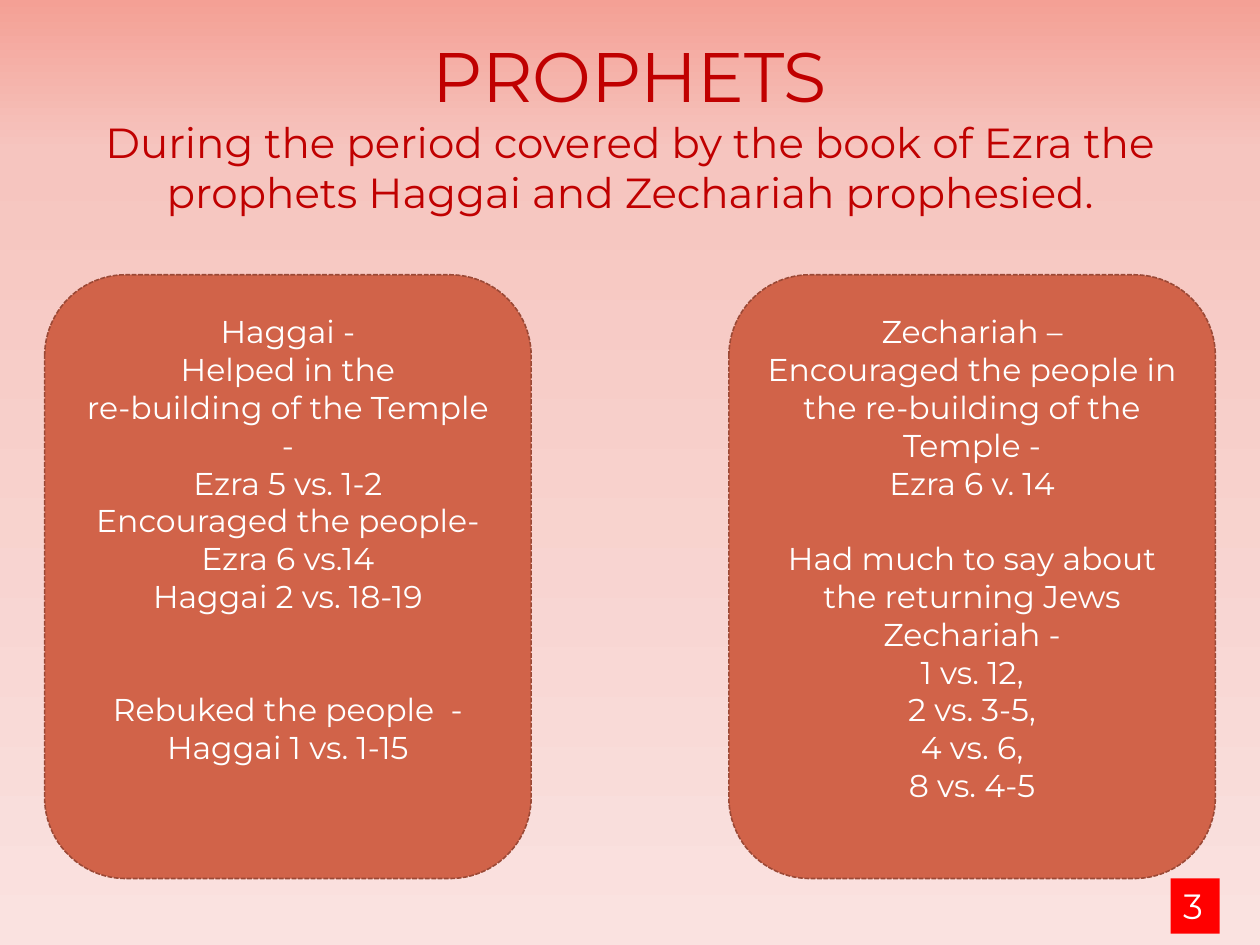
import copy

from pptx import Presentation
from pptx.dml.color import RGBColor
from pptx.enum import dml, shapes, text
from pptx.util import Pt

FONT = "Montserrat"
DARK_RED = RGBColor(0xC0, 0x00, 0x00)
BRIGHT_RED = RGBColor(0xFF, 0x00, 0x00)
WHITE = RGBColor(0xFF, 0xFF, 0xFF)
CARD_FILL = RGBColor(0xD1, 0x63, 0x49)
CARD_LINE = RGBColor(0x9B, 0x49, 0x36)
BACKGROUND = [
    (0, RGBColor(0xF4, 0xA0, 0x95)),
    (0.16, RGBColor(0xF6, 0xC5, 0xBF)),
    (1, RGBColor(0xFA, 0xE2, 0xE0)),
]
LINE_HEIGHT = 21.6

# Each card is a list of groups; a group is a list of paragraphs.
HAGGAI = [
    [
        "Haggai -",
        "Helped in the",
        "re-building of the Temple -",
        "Ezra 5 vs. 1-2",
        "Encouraged the people- Ezra 6 vs.14",
        "Haggai 2 vs. 18-19",
    ],
    ["Rebuked the people  -", "Haggai 1 vs. 1-15"],
]
ZECHARIAH = [
    [
        "Zechariah –",
        "Encouraged the people in the re-building of the Temple -",
        "Ezra 6 v. 14",
    ],
    [
        "Had much to say about the returning Jews Zechariah -",
        "1 vs. 12,",
        "2 vs. 3-5,",
        "4 vs. 6,",
        "8 vs. 4-5",
    ],
]


def paint_background(page):
    fill = page.background.fill
    fill.gradient()
    fill.gradient_angle = 270
    stops = fill.gradient_stops
    # A new gradient has two stops; a third is cloned from the first.
    first = stops[0]._gs
    first.addnext(copy.deepcopy(first))
    for stop, (position, color) in zip(fill.gradient_stops, BACKGROUND):
        stop.position = position
        stop.color.rgb = color


def write(para, words, size, color, align=text.PP_ALIGN.CENTER):
    para.text = words
    para.alignment = align
    for span in para.runs:
        span.font.name = FONT
        span.font.size = Pt(size)
        span.font.color.rgb = color


def add_heading(page):
    box = page.shapes.add_textbox(Pt(0), Pt(15), Pt(720), Pt(201))
    frame = box.text_frame
    frame.word_wrap = True
    write(frame.paragraphs[0], "PROPHETS", 40, DARK_RED)
    write(
        frame.add_paragraph(),
        "During the period covered by the book of Ezra "
        "the prophets Haggai and Zechariah prophesied.",
        24,
        DARK_RED,
    )


def add_card(page, left, groups, gap_lines):
    """Add a rounded card, with gap_lines of space between its groups."""
    card = page.shapes.add_shape(
        shapes.MSO_SHAPE.ROUNDED_RECTANGLE, Pt(left), Pt(157), Pt(278), Pt(345)
    )
    card.shadow.inherit = False
    card.fill.solid()
    card.fill.fore_color.rgb = CARD_FILL
    card.line.color.rgb = CARD_LINE
    card.line.width = Pt(0.9)
    card.line.dash_style = dml.MSO_LINE.SQUARE_DOT
    frame = card.text_frame
    frame.word_wrap = True
    frame.vertical_anchor = text.MSO_ANCHOR.TOP
    frame.margin_top = Pt(8)
    for group_index, group in enumerate(groups):
        for index, words in enumerate(group):
            is_first = group_index == index == 0
            para = frame.paragraphs[0] if is_first else frame.add_paragraph()
            write(para, words, 18, WHITE)
            if group_index and index == 0:
                para.space_before = Pt(gap_lines * LINE_HEIGHT)


def add_page_number(page, number):
    badge = page.shapes.add_shape(
        shapes.MSO_SHAPE.RECTANGLE, Pt(669), Pt(502), Pt(28), Pt(31.5)
    )
    badge.shadow.inherit = False
    badge.fill.solid()
    badge.fill.fore_color.rgb = BRIGHT_RED
    badge.line.fill.background()
    frame = badge.text_frame
    frame.word_wrap = False
    frame.vertical_anchor = text.MSO_ANCHOR.TOP
    write(frame.paragraphs[0], number, 20, WHITE, text.PP_ALIGN.LEFT)


def main():
    deck = Presentation()
    deck.slide_width, deck.slide_height = Pt(720), Pt(540)
    page = deck.slides.add_slide(deck.slide_layouts[6])
    paint_background(page)
    add_heading(page)
    add_page_number(page, "3")
    add_card(page, 25.5, HAGGAI, gap_lines=2)
    add_card(page, 416.5, ZECHARIAH, gap_lines=1)
    deck.save("out.pptx")


if __name__ == "__main__":
    main()
